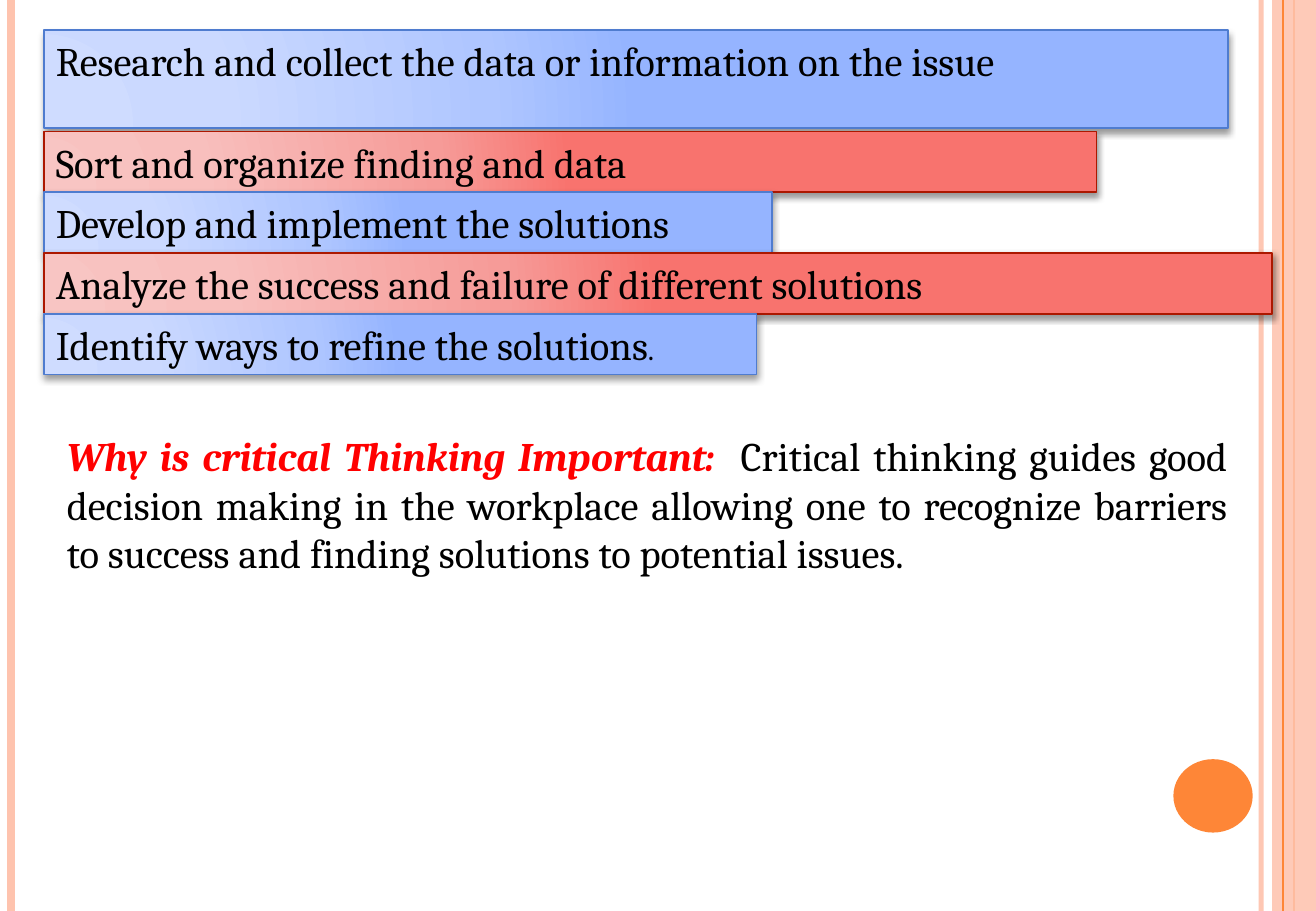
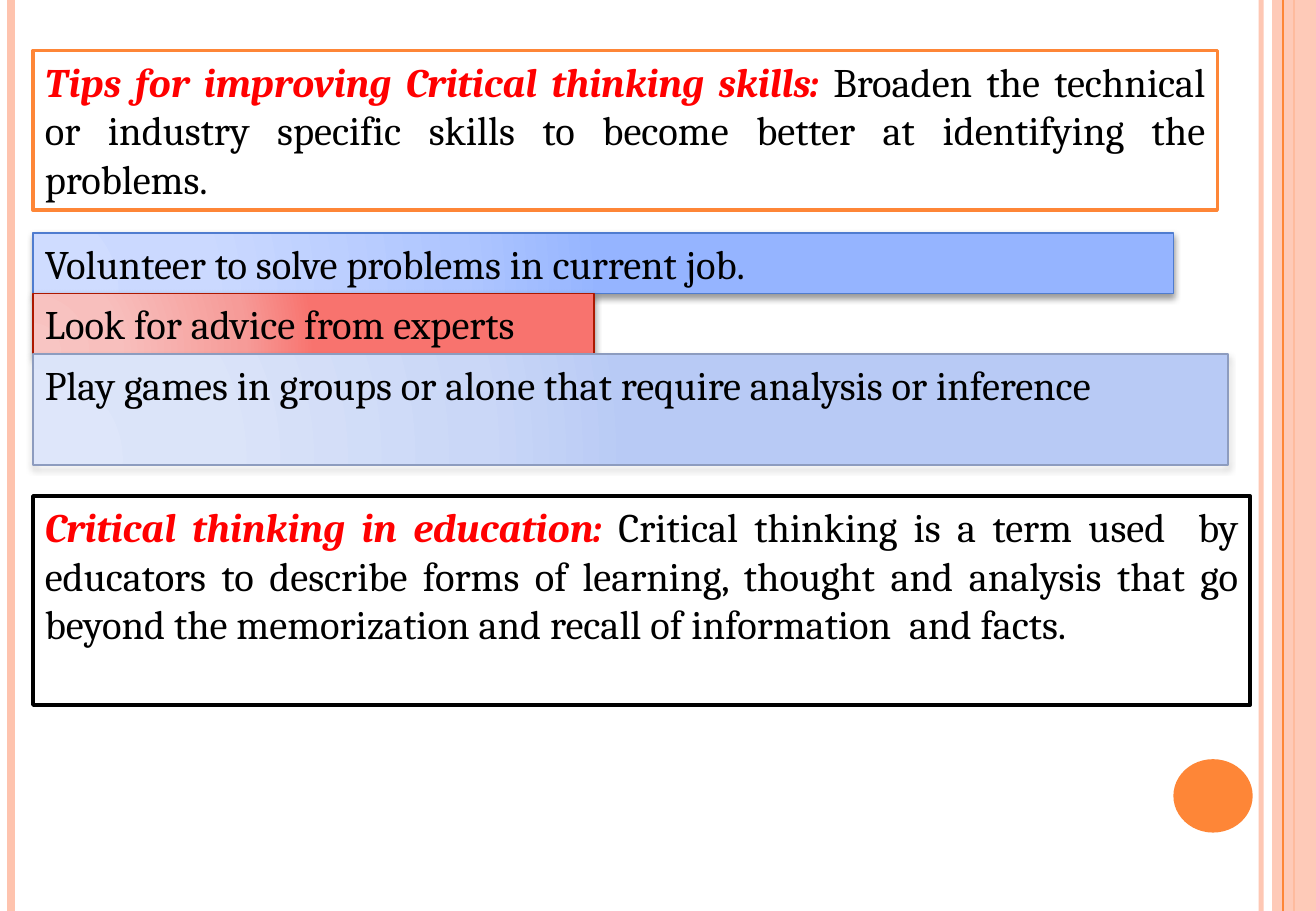
from dataclasses import dataclass

from lxml.etree import SubElement
from pptx import Presentation
from pptx.dml.color import RGBColor
from pptx.enum.shapes import MSO_CONNECTOR as Connector, MSO_SHAPE as Preset
from pptx.enum.text import MSO_ANCHOR as Anchor, PP_ALIGN as Align
from pptx.oxml import parse_xml
from pptx.oxml.ns import nsdecls, qn
from pptx.util import Pt


@dataclass(frozen=True)
class Theme:
    font: str = "Cambria"
    body: int = 24
    small: int = 18
    ink: str = "000000"
    heading: str = "FF0000"
    paper: str = "FFFFFF"
    peach: str = "FEC3AE"
    orange: str = "FE8637"


THEME = Theme()
WIDTH, HEIGHT = 780, 540
STOPS = (0, 30, 75, 100)
TONES = {
    "blue": (("CFDCFF", "CBD9FF", "AFC6FF", "95B4FF"), "4F7CCF"),
    "red": (("F8C5C3", "F8BFBD", "F69B98", "F8736E"), "AC1800"),
    "pale": (("DEE6FA", "DBE4F9", "CAD7F7", "B8CAF5"), "8D9CBF"),
}
HEAD = {"size": Pt(THEME.body), "bold": True, "italic": True}
BODY = {"size": Pt(THEME.body), "bold": False, "italic": False}
SMALL = {**BODY, "size": Pt(THEME.small)}

RAILS_BELOW_BAND = [
    (747.5, THEME.peach, 3, 93),
    (6.5, THEME.peach, 4.5, 100),
    (767, THEME.orange, 1.5, 100),
]
RAILS_ABOVE_BAND = [(760.5, THEME.orange, 0.75, 100)]

SLIDES = [
    {
        "stack": (26, 18),
        "bars": [
            ("Research and collect the data or information on the issue", "", "blue", 702, 58, 2),
            ("Sort and organize finding and data", "", "red", 624, 36, 0),
            ("Develop and implement the solutions", "", "blue", 431.5, 36, 0),
            ("Analyze the success and failure of different solutions", "", "red", 728, 36, 0),
            ("Identify ways to refine the solutions", ".", "blue", 422.5, 36, 0),
        ],
        "panels": [
            ("Why is critical Thinking Important:  ",
             "Critical thinking guides good decision making in the workplace allowing one "
             "to recognize barriers to success and finding solutions to potential issues.",
             (32.5, 252, 702, 124), None),
        ],
    },
    {
        "stack": (19.5, 138),
        "bars": [
            ("Volunteer to solve problems in current job.", "", "blue", 676, 36, 0),
            ("Look for advice from experts", "", "red", 332.5, 36, 0),
            ("Play games in groups or alone that require analysis or inference", "", "pale",
             708.5, 65.5, 0),
        ],
        "panels": [
            ("Tips for improving Critical thinking skills: ",
             "Broaden the technical or industry specific skills to become better at "
             "identifying the problems.",
             (19.5, 30, 702, 94.5), THEME.orange),
            ("Critical thinking in education: ",
             "Critical thinking is a term used  by educators to describe forms of learning, "
             "thought and analysis that go beyond the memorization and recall of "
             "information  and facts.",
             (19.5, 294, 721.5, 124), THEME.ink),
        ],
    },
]


def rgb(value):
    return RGBColor.from_string(value)


def set_alpha(shape, percent):
    color = next(shape.element.spPr.iter(qn("a:srgbClr")))
    SubElement(color, qn("a:alpha"), val=str(percent * 1000))


def add_box(page, preset, place, fill=None, line=None, weight=1):
    box = page.shapes.add_shape(preset, *map(Pt, place))
    box.shadow.inherit = False
    if fill:
        box.fill.solid()
        box.fill.fore_color.rgb = rgb(fill)
    else:
        box.fill.background()
    if line:
        box.line.color.rgb = rgb(line)
        box.line.width = Pt(weight)
    else:
        box.line.fill.background()
    return box


def write(box, spans, align):
    frame = box.text_frame
    frame.word_wrap = True
    frame.vertical_anchor = Anchor.TOP
    para = frame.paragraphs[0]
    para.alignment = align
    for text, color, form in spans:
        span = para.add_run()
        span.text = text
        span.font.color.rgb = rgb(color)
        for name, value in {"name": THEME.font, **form}.items():
            setattr(span.font, name, value)


def add_rails(page, rails):
    for x, color, weight, alpha in rails:
        rail = page.shapes.add_connector(Connector.STRAIGHT, Pt(x), 0, Pt(x), Pt(HEIGHT))
        rail.line.color.rgb = rgb(color)
        rail.line.width = Pt(weight)
        SubElement(rail.element.spPr, qn("a:effectLst"))
        set_alpha(rail, alpha)


def add_frame(page):
    add_rails(page, RAILS_BELOW_BAND)
    band = add_box(page, Preset.RECTANGLE, (754, 0, 26, HEIGHT), THEME.peach)
    set_alpha(band, 87)
    add_rails(page, RAILS_ABOVE_BAND)
    add_box(page, Preset.OVAL, (695.5, 450, 47, 43.5), THEME.orange)


def add_bar(page, place, tone):
    colors, edge = TONES[tone]
    bar = add_box(page, Preset.RECTANGLE, place, line=edge)
    properties = bar.element.spPr
    stops = "".join(
        f'<a:gs pos="{stop * 1000}"><a:srgbClr val="{color}"/></a:gs>'
        for stop, color in zip(STOPS, colors)
    )
    gradient = parse_xml(
        f'<a:gradFill {nsdecls("a")} rotWithShape="1"><a:gsLst>{stops}</a:gsLst>'
        '<a:path path="circle"><a:fillToRect l="5000" t="100000" r="120000" b="10000"/>'
        "</a:path></a:gradFill>"
    )
    properties.replace(properties.find(qn("a:noFill")), gradient)
    shadow = parse_xml(
        f'<a:outerShdw {nsdecls("a")} blurRad="{Pt(4)}" dist="{Pt(2)}" dir="5400000" '
        'rotWithShape="0"><a:srgbClr val="000000"><a:alpha val="40000"/></a:srgbClr>'
        "</a:outerShdw>"
    )
    properties.find(qn("a:effectLst")).append(shadow)
    return bar


def add_stack(page, corner, bars):
    left, top = corner
    for text, tail, tone, width, height, gap in bars:
        bar = add_bar(page, (left, top, width, height), tone)
        spans = [(text, THEME.ink, BODY), (tail, THEME.ink, SMALL)]
        write(bar, [span for span in spans if span[0]], Align.LEFT)
        top += height + gap


def add_panel(page, heading, text, place, edge):
    if edge:
        panel = add_box(page, Preset.RECTANGLE, place, THEME.paper, edge, 2)
    else:
        panel = page.shapes.add_textbox(*map(Pt, place))
    write(panel, [(heading, THEME.heading, HEAD), (text, THEME.ink, BODY)], Align.JUSTIFY)


def main():
    deck = Presentation()
    deck.slide_width, deck.slide_height = Pt(WIDTH), Pt(HEIGHT)
    for content in SLIDES:
        page = deck.slides.add_slide(deck.slide_layouts[6])
        add_frame(page)
        add_stack(page, content["stack"], content["bars"])
        for panel in content["panels"]:
            add_panel(page, *panel)
    deck.save("out.pptx")


if __name__ == "__main__":
    main()
